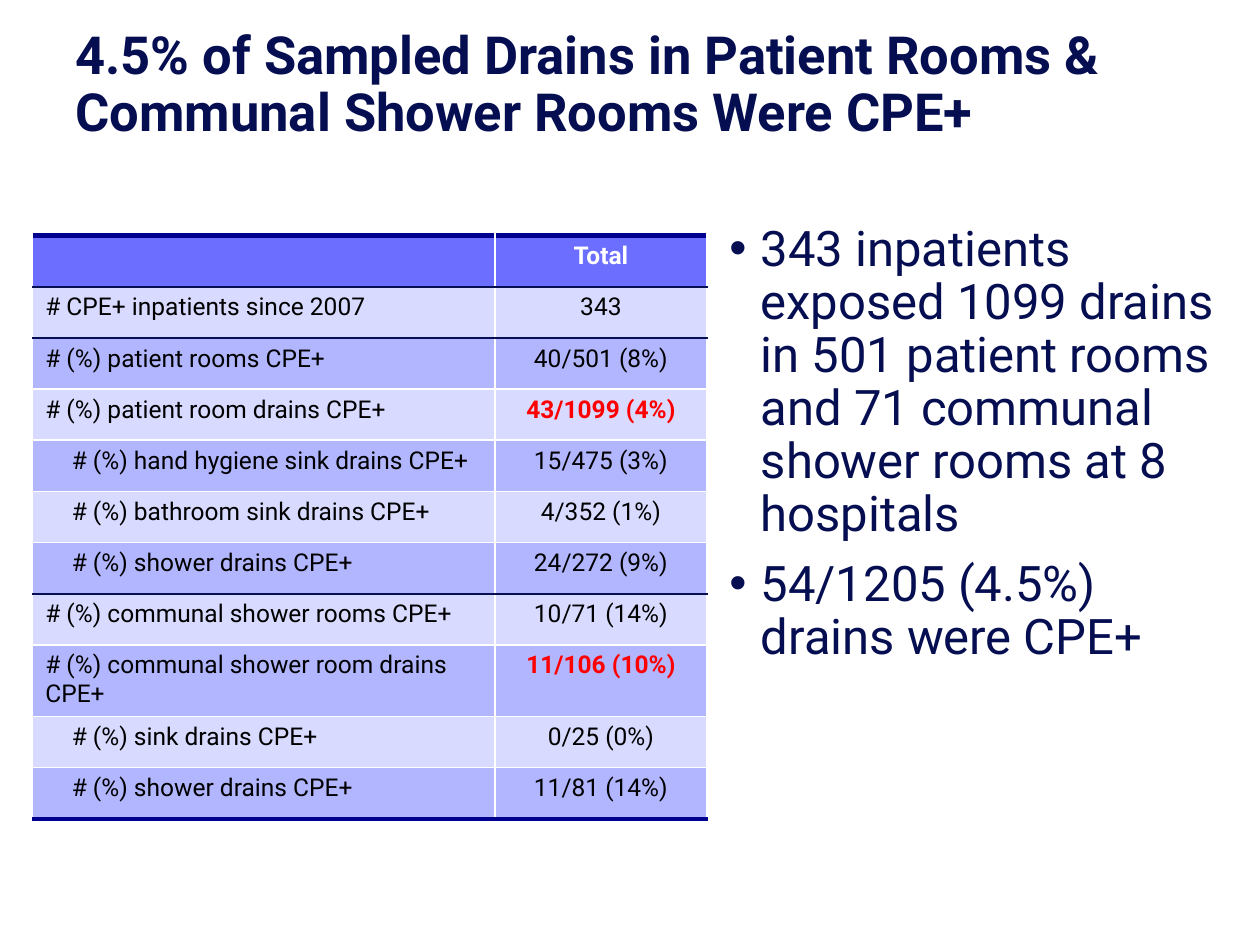
from lxml import etree
from pptx import Presentation
from pptx.dml.color import RGBColor
from pptx.enum.text import MSO_ANCHOR, PP_ALIGN
from pptx.oxml.ns import qn
from pptx.util import Inches, Pt

CENTER = PP_ALIGN.CENTER
LEFT = PP_ALIGN.LEFT
MIDDLE = MSO_ANCHOR.MIDDLE
TOP = MSO_ANCHOR.TOP

FONT = "Roboto"
NAVY = "060E52"
WHITE = "FFFFFF"
BLACK = "000000"
RED = "FF0000"
HEADER_FILL = "6B6EFF"
BAND_FILLS = ("D8DBFF", "B1B6FF")

TITLE = "4.5% of Sampled Drains in Patient Rooms & Communal Shower Rooms Were CPE+"
BULLETS = (
    "343 inpatients exposed 1099 drains in 501 patient rooms and 71 communal "
    "shower rooms at 8 hospitals",
    "54/1205 (4.5%) drains were CPE+",
)
ROWS = (
    ("", "Total"),
    ("# CPE+ inpatients since 2007", "343"),
    ("# (%) patient rooms CPE+", "40/501 (8%)"),
    ("# (%) patient room drains CPE+", "43/1099 (4%)"),
    ("# (%) hand hygiene sink drains CPE+", "15/475 (3%)"),
    ("# (%) bathroom sink drains CPE+", "4/352 (1%)"),
    ("# (%) shower drains CPE+", "24/272 (9%)"),
    ("# (%) communal shower rooms CPE+", "10/71 (14%)"),
    ("# (%) communal shower room drains CPE+", "11/106 (10%)"),
    ("# (%) sink drains CPE+", "0/25 (0%)"),
    ("# (%) shower drains CPE+", "11/81 (14%)"),
)
INDENTED_ROWS = (4, 5, 6, 9, 10)
HIGHLIGHTED_ROWS = (3, 8)
TALL_ROW = 8
THIN_RULE = (WHITE, 1)
SECTION_RULE = ("060E54", 1.5)
OUTER_RULE = ("000090", 3)
RULES = {
    0: OUTER_RULE,
    1: SECTION_RULE,
    2: SECTION_RULE,
    7: SECTION_RULE,
    len(ROWS): OUTER_RULE,
}


def color(value):
    return RGBColor.from_string(value)


def format_runs(paragraph, size, font_color, bold=False):
    for run in paragraph.runs:
        run.font.name = FONT
        run.font.size = Pt(size)
        run.font.bold = bold
        run.font.color.rgb = color(font_color)


def add_text_frame(slide, left, top, width, height, anchor):
    text_frame = slide.shapes.add_textbox(left, top, width, height).text_frame
    text_frame.word_wrap = True
    text_frame.vertical_anchor = anchor
    return text_frame


def add_title(slide, left, top, width, height):
    text_frame = add_text_frame(slide, left, top, width, height, MIDDLE)
    text_frame.text = TITLE
    paragraph = text_frame.paragraphs[0]
    paragraph.line_spacing = 0.9
    format_runs(paragraph, 30, NAVY, True)


def set_border(cell, side, rule):
    rule_color, width = rule
    properties = cell._tc.get_or_add_tcPr()
    line = etree.SubElement(properties, qn(f"a:ln{side}"), w=str(Pt(width)))
    fill = etree.SubElement(line, qn("a:solidFill"))
    etree.SubElement(fill, qn("a:srgbClr"), val=rule_color)


def format_cell(cell, row, column):
    header = row == 0
    highlighted = row in HIGHLIGHTED_ROWS and column == 1
    for side, rule in (
        ("L", THIN_RULE),
        ("R", THIN_RULE),
        ("T", RULES.get(row, THIN_RULE)),
        ("B", RULES.get(row + 1, THIN_RULE)),
    ):
        set_border(cell, side, rule)
    cell.fill.solid()
    cell.fill.fore_color.rgb = color(HEADER_FILL if header else BAND_FILLS[(row - 1) % 2])
    if column == 0 and row in INDENTED_ROWS:
        cell.margin_left = Inches(0.31)
    cell.text_frame.text = ROWS[row][column]
    paragraph = cell.text_frame.paragraphs[0]
    paragraph.alignment = CENTER if column == 1 else LEFT
    font_color = WHITE if header else RED if highlighted else BLACK
    format_runs(paragraph, 14, font_color, header or highlighted)


def add_drain_table(slide, left, top, width, height):
    table = slide.shapes.add_table(len(ROWS), 2, left, top, width, height).table
    table.first_row = False
    table.horz_banding = False
    label_width = Inches(3.67)
    tall_height = Inches(0.57)
    row_height = (height - tall_height) // (len(ROWS) - 1)
    table.columns[0].width = label_width
    table.columns[1].width = width - label_width
    for row in range(len(ROWS)):
        table.rows[row].height = tall_height if row == TALL_ROW else row_height
        for column in range(2):
            format_cell(table.cell(row, column), row, column)


def add_bullets(slide, left, top, width, height):
    text_frame = add_text_frame(slide, left, top, width, height, TOP)
    for index, text in enumerate(BULLETS):
        paragraph = text_frame.add_paragraph() if index else text_frame.paragraphs[0]
        paragraph.text = text
        paragraph.line_spacing = 0.9
        paragraph.space_before = Pt(10)
        format_runs(paragraph, 28, NAVY)
        properties = paragraph._p.get_or_add_pPr()
        properties.set("marL", str(Inches(0.25)))
        properties.set("indent", str(Inches(-0.25)))
        etree.SubElement(properties, qn("a:buFont"), typeface="Arial")
        etree.SubElement(properties, qn("a:buChar"), char="•")


def main():
    presentation = Presentation()
    presentation.slide_width = Inches(10)
    presentation.slide_height = Inches(7.5)
    slide = presentation.slides.add_slide(presentation.slide_layouts[6])
    add_title(slide, Inches(0.5), Inches(0.06), Inches(9), Inches(1.25))
    add_drain_table(slide, Inches(0.26), Inches(1.87), Inches(5.35), Inches(4.63))
    add_bullets(slide, Inches(5.69), Inches(1.73), Inches(4.06), Inches(5.31))
    presentation.save("out.pptx")


if __name__ == "__main__":
    main()
